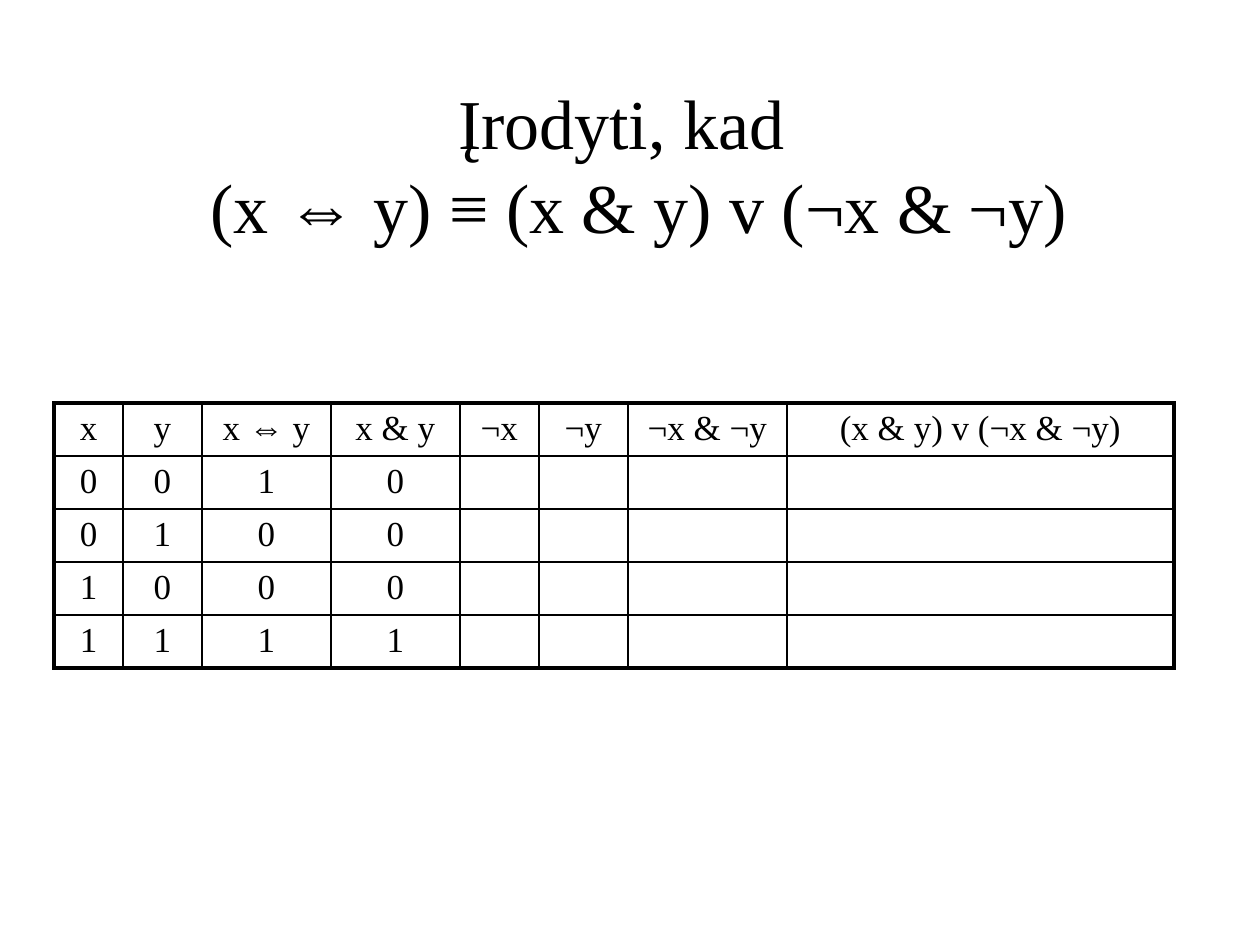
"""Builds a slide with a truth table for proving a logical equivalence."""
import pptx
import pptx.dml.color
import pptx.enum.text
import pptx.oxml.ns
import pptx.util
from lxml import etree

TITLE = "Įrodyti, kad \v (x ⇔ y) ≡ (x & y) v (¬x & ¬y)"
TRUTH_TABLE = [
    ["x", "y", "x ⇔ y", "x & y", "¬x", "¬y", "¬x & ¬y", "(x & y) v (¬x & ¬y)"],
    ["0", "0", "1", "0", "", "", "", ""],
    ["0", "1", "0", "0", "", "", "", ""],
    ["1", "0", "0", "0", "", "", "", ""],
    ["1", "1", "1", "1", "", "", "", ""],
]
COLUMN_WIDTHS = [69, 79, 129, 129, 79, 89, 159, 387]
PAGE_SIZE = (1260, 945)
TITLE_PLACE = (94, 84, 1072, 158)
TABLE_CORNER = (54, 403)
TABLE_HEIGHT = 258
CELL_MARGINS = {"margin_top": 6, "margin_bottom": 5}
THEME = {
    "font": "Times New Roman",
    "ink": "000000",
    "title_size": 40,
    "cell_size": 20,
    "outer_line": 2.25,
    "inner_line": 1,
}


def px(length):
    return pptx.util.Emu(round(length * 914400 / 126))


def style_paragraph(paragraph, size):
    paragraph.alignment = pptx.enum.text.PP_ALIGN.CENTER
    paragraph.font.name = THEME["font"]
    paragraph.font.size = pptx.util.Pt(size)
    paragraph.font.color.rgb = pptx.dml.color.RGBColor.from_string(THEME["ink"])


def add_border(properties, side, is_outer):
    qn = pptx.oxml.ns.qn
    width = pptx.util.Pt(THEME["outer_line" if is_outer else "inner_line"])
    line = etree.SubElement(properties, qn(f"a:ln{side}"), w=str(int(width)))
    fill = etree.SubElement(line, qn("a:solidFill"))
    etree.SubElement(fill, qn("a:srgbClr"), val=THEME["ink"])


def add_title(page):
    box = page.shapes.add_textbox(*map(px, TITLE_PLACE))
    frame = box.text_frame
    frame.word_wrap = True
    frame.vertical_anchor = pptx.enum.text.MSO_ANCHOR.MIDDLE
    frame.text = TITLE
    style_paragraph(frame.paragraphs[0], THEME["title_size"])


def add_truth_table(page):
    row_count, column_count = len(TRUTH_TABLE), len(COLUMN_WIDTHS)
    size = (sum(COLUMN_WIDTHS), TABLE_HEIGHT)
    table = page.shapes.add_table(
        row_count, column_count, *map(px, TABLE_CORNER + size)
    ).table
    table.first_row = table.horz_banding = False
    for column, width in zip(table.columns, COLUMN_WIDTHS):
        column.width = px(width)
    for row_index, texts in enumerate(TRUTH_TABLE):
        table.rows[row_index].height = px(TABLE_HEIGHT / row_count)
        for column_index, text in enumerate(texts):
            cell = table.cell(row_index, column_index)
            cell.text = text
            style_paragraph(cell.text_frame.paragraphs[0], THEME["cell_size"])
            for margin, length in CELL_MARGINS.items():
                setattr(cell, margin, px(length))
            outer_sides = {
                "L": column_index == 0,
                "R": column_index == column_count - 1,
                "T": row_index == 0,
                "B": row_index == row_count - 1,
            }
            properties = cell._tc.get_or_add_tcPr()
            for side, is_outer in outer_sides.items():
                add_border(properties, side, is_outer)
            cell.fill.background()


def main():
    deck = pptx.Presentation()
    deck.slide_width, deck.slide_height = map(px, PAGE_SIZE)
    page = deck.slides.add_slide(deck.slide_layouts[6])
    add_title(page)
    add_truth_table(page)
    deck.save("out.pptx")


if __name__ == "__main__":
    main()
